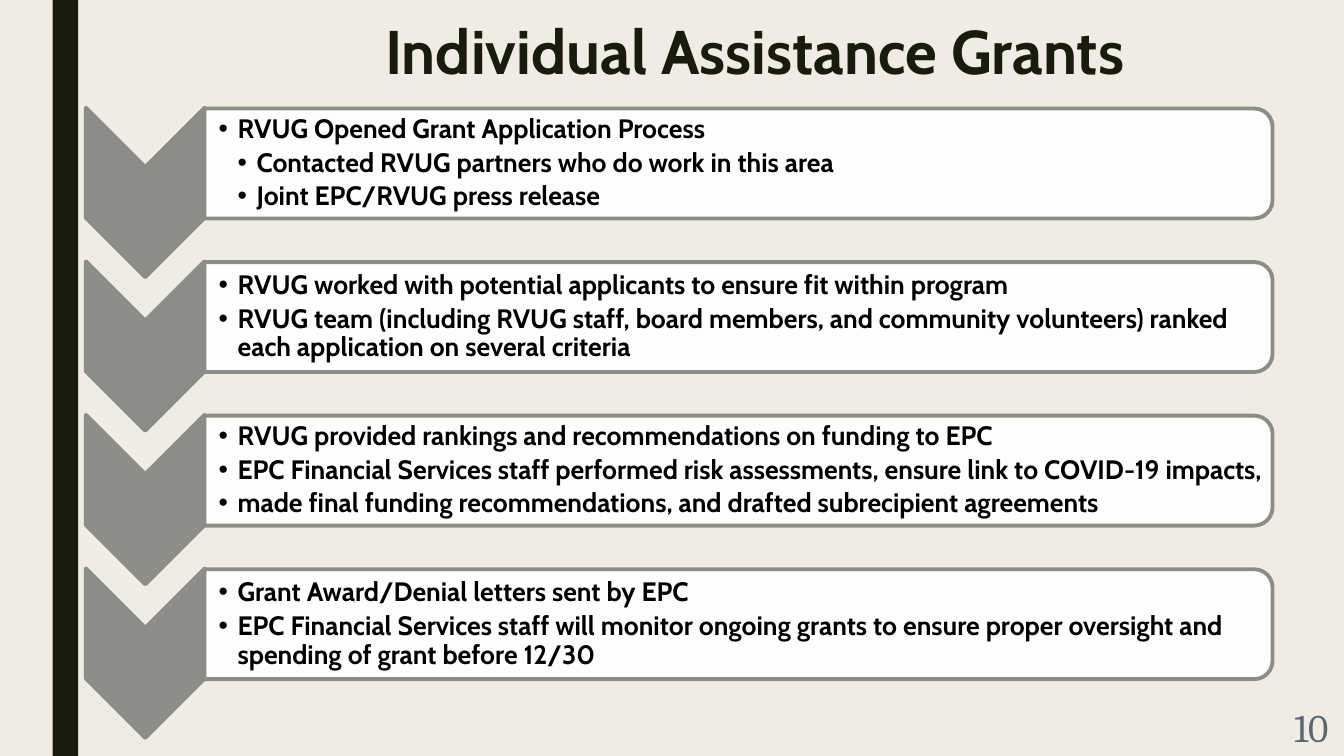
from dataclasses import dataclass

from lxml import etree
from pptx import Presentation
from pptx import util as u
from pptx.dml.color import RGBColor
from pptx.enum import shapes, text
from pptx.oxml import ns


@dataclass(frozen=True)
class Theme:
    background: str = "EFEDE3"
    dark: str = "191B0E"
    grey: str = "8C8D86"
    panel: str = "FFFFFF"
    body: str = "000000"
    number: str = "5C6670"
    font: str = "Cabin"
    number_font: str = "Cambria"
    title_size: float = 44
    body_size: float = 19
    number_size: float = 28
    outline: float = 2.75


THEME = Theme()
STEP_PITCH = 3.87
HANGING = 0.48

# Each step lists (level, wording) pairs.
STEPS = [
    [(0, "RVUG Opened Grant Application Process"),
     (1, "Contacted RVUG partners who do work in this area"),
     (1, "Joint EPC/RVUG press release")],
    [(0, "RVUG worked with potential applicants to ensure fit within program"),
     (0, "RVUG team (including RVUG staff, board members, and community "
         "volunteers) ranked each application on several criteria")],
    [(0, "RVUG provided rankings and recommendations on funding to EPC"),
     (0, "EPC Financial Services staff performed risk assessments, "
         "ensure link to COVID-19 impacts,"),
     (0, "made final funding recommendations, and drafted subrecipient agreements")],
    [(0, "Grant Award/Denial letters sent by EPC"),
     (0, "EPC Financial Services staff will monitor ongoing grants to ensure "
         "proper oversight and spending of grant before 12/30")],
]


def apply(target, values):
    for name, value in values.items():
        setattr(target, name, value)


def colour(code):
    return RGBColor.from_string(code)


def add_child(parent, tag, **attributes):
    return etree.SubElement(parent, ns.qn(tag), attributes)


def write(para, wording, size, font, code, bold=False):
    span = para.add_run()
    span.text = wording
    apply(span.font, {"size": u.Pt(size), "name": font, "bold": bold})
    span.font.color.rgb = colour(code)


def add_filled(slide, kind, left, top, width, height, code):
    shape = slide.shapes.add_shape(
        kind, u.Cm(left), u.Cm(top), u.Cm(width), u.Cm(height))
    shape.shadow.inherit = False
    shape.fill.solid()
    shape.fill.fore_color.rgb = colour(code)
    shape.line.fill.background()
    return shape


def add_turned(slide, kind, centre_x, centre_y, width, height, code):
    """Add an outlined shape turned a quarter about its centre."""
    shape = add_filled(slide, kind, centre_x - width / 2,
                       centre_y - height / 2, width, height, code)
    shape.rotation = 90
    shape.line.color.rgb = colour(THEME.grey)
    shape.line.width = u.Pt(THEME.outline)
    add_child(shape.line._get_or_add_ln(), "a:round")
    return shape


def add_textbox(slide, left, top, width, height, frame_format):
    box = slide.shapes.add_textbox(
        u.Cm(left), u.Cm(top), u.Cm(width), u.Cm(height))
    apply(box.text_frame, {"word_wrap": True, **frame_format})
    return box.text_frame


def add_bullets(frame, bullets):
    for index, (level, wording) in enumerate(bullets):
        para = frame.add_paragraph() if index else frame.paragraphs[0]
        apply(para, {"level": level, "line_spacing": 0.9,
                     "space_after": u.Pt(3.4)})
        properties = para._p.get_or_add_pPr()
        properties.set("marL", str(u.Cm(HANGING * (level + 1))))
        properties.set("indent", str(u.Cm(-HANGING)))
        add_child(properties, "a:buFont", typeface="Arial")
        add_child(properties, "a:buChar", char="•")
        write(para, wording, THEME.body_size, THEME.font, THEME.body, True)


def add_step(slide, offset, bullets):
    kinds = shapes.MSO_SHAPE
    add_turned(slide, kinds.CHEVRON, 3.66, 4.85 + offset, 4.27, 2.99, THEME.grey)
    panel = add_turned(slide, kinds.ROUND_2_SAME_RECTANGLE, 18.61,
                       4.12 + offset, 2.77, 26.92, THEME.panel)
    fill_colour = panel._element.spPr.find(
        f"{ns.qn('a:solidFill')}/{ns.qn('a:srgbClr')}")
    add_child(fill_colour, "a:alpha", val="90000")
    frame = add_textbox(slide, 5.13, 2.87 + offset, 26.8, 2.51, {
        "vertical_anchor": text.MSO_ANCHOR.MIDDLE,
        "margin_left": u.Cm(0.38), "margin_right": u.Cm(0.03),
        "margin_top": u.Cm(0.03), "margin_bottom": u.Cm(0.03)})
    add_bullets(frame, bullets)


def set_title(slide, wording):
    title = slide.shapes.title
    apply(title, {"left": u.Cm(9.37), "top": u.Cm(0.43),
                  "width": u.Cm(19.23), "height": u.Cm(2.44)})
    apply(title.text_frame, {"vertical_anchor": text.MSO_ANCHOR.TOP,
                             "auto_size": text.MSO_AUTO_SIZE.NONE})
    para = title.text_frame.paragraphs[0]
    apply(para, {"alignment": text.PP_ALIGN.RIGHT, "line_spacing": 0.89})
    write(para, wording, THEME.title_size, THEME.font, THEME.dark, True)


def add_page_number(slide, number):
    frame = add_textbox(slide, 32.23, 17.6, 1.63, 1.45, {
        "auto_size": text.MSO_AUTO_SIZE.SHAPE_TO_FIT_TEXT})
    para = frame.paragraphs[0]
    para.alignment = text.PP_ALIGN.CENTER
    write(para, number, THEME.number_size, THEME.number_font, THEME.number)


def main():
    deck = Presentation()
    apply(deck, {"slide_width": u.Cm(33.87), "slide_height": u.Cm(19.05)})
    slide = deck.slides.add_slide(deck.slide_layouts.get_by_name("Title Only"))
    slide.background.fill.solid()
    slide.background.fill.fore_color.rgb = colour(THEME.background)

    add_filled(slide, shapes.MSO_SHAPE.RECTANGLE, 1.33, 0, 0.64, 19.05, THEME.dark)
    set_title(slide, "Individual Assistance Grants")
    for index, bullets in enumerate(STEPS):
        add_step(slide, index * STEP_PITCH, bullets)
    add_page_number(slide, "10")
    deck.save("out.pptx")


if __name__ == "__main__":
    main()
